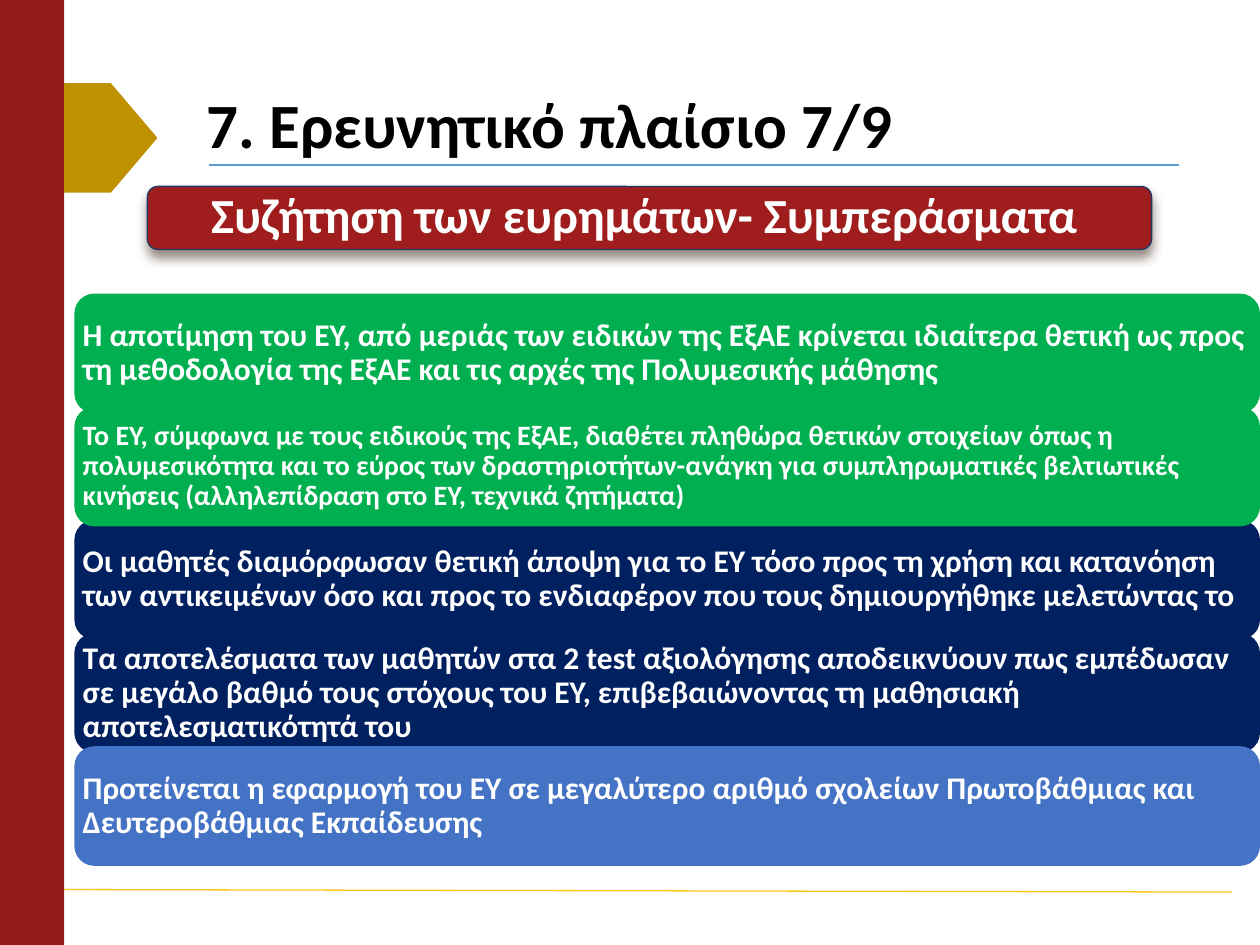
"""Build the slide of discussion and conclusions with a banner and five stacked cards."""
from dataclasses import dataclass

import lxml.etree
import pptx
import pptx.dml.color
import pptx.enum.shapes
import pptx.enum.text
import pptx.oxml
import pptx.oxml.ns
import pptx.util

COLUMNS, ROWS = 100, 75
PRESETS = pptx.enum.shapes.MSO_SHAPE
ALIGN = pptx.enum.text.PP_ALIGN


@dataclass(frozen=True)
class Theme:
    font: str = "Calibri"
    title_size: float = 36
    banner_size: float = 28
    card_size: float = 18
    small_size: float = 16
    rule_width: float = 0.75
    black: str = "000000"
    white: str = "FFFFFF"
    side: str = "931B1B"
    marker: str = "BF9000"
    banner: str = "9F1D1D"
    banner_edge: str = "203864"
    shadow: str = "4E3B30"
    blue_rule: str = "5B9BD5"
    gold_rule: str = "FFC61A"
    green: str = "00B050"
    navy: str = "002060"
    blue: str = "4472C4"


@dataclass(frozen=True)
class Area:
    column: float
    row: float
    columns: float
    rows: float


@dataclass(frozen=True)
class Card:
    position: int
    fill: str
    size: float
    text: str


THEME = Theme()
BANNER_AREA = Area(11.7, 14.8, 79.7, 5)
FIRST_CARD = Area(5.9, 23.3, 94.1, 9.5)
CARD_PITCH = 8.98
CARDS = (
    Card(2, THEME.navy, THEME.card_size,
         "Οι μαθητές διαμόρφωσαν θετική άποψη για το ΕΥ τόσο προς τη χρήση και κατανόηση "
         "των αντικειμένων όσο και προς το ενδιαφέρον που τους δημιουργήθηκε μελετώντας το"),
    Card(3, THEME.navy, THEME.card_size,
         "Τα αποτελέσματα των μαθητών στα 2 test αξιολόγησης αποδεικνύουν πως εμπέδωσαν "
         "σε μεγάλο βαθμό τους στόχους του ΕΥ, επιβεβαιώνοντας τη μαθησιακή αποτελεσματικότητά του"),
    Card(0, THEME.green, THEME.card_size,
         "Η αποτίμηση του ΕΥ, από μεριάς των ειδικών της ΕξΑΕ κρίνεται ιδιαίτερα θετική "
         "ως προς τη μεθοδολογία της ΕξΑΕ και τις αρχές της Πολυμεσικής μάθησης"),
    Card(4, THEME.blue, THEME.card_size,
         "Προτείνεται η εφαρμογή του ΕΥ σε μεγαλύτερο αριθμό σχολείων Πρωτοβάθμιας "
         "και Δευτεροβάθμιας Εκπαίδευσης"),
    Card(1, THEME.green, THEME.small_size,
         "Το ΕΥ, σύμφωνα με τους ειδικούς της ΕξΑΕ, διαθέτει πληθώρα θετικών στοιχείων όπως η "
         "πολυμεσικότητα και το εύρος των δραστηριοτήτων-ανάγκη για συμπληρωματικές βελτιωτικές "
         "κινήσεις (αλληλεπίδραση στο ΕΥ, τεχνικά ζητήματα)"),
)

deck = pptx.Presentation()
deck.slide_width, deck.slide_height = pptx.util.Inches(10), pptx.util.Inches(7.5)
page = deck.slides.add_slide(deck.slide_layouts[6])


def across(columns: float) -> int:
    return round(deck.slide_width * columns / COLUMNS)


def down(rows: float) -> int:
    return round(deck.slide_height * rows / ROWS)


def place(area: Area) -> tuple[int, int, int, int]:
    return across(area.column), down(area.row), across(area.columns), down(area.rows)


def colour(code: str) -> pptx.dml.color.RGBColor:
    return pptx.dml.color.RGBColor.from_string(code)


def add_block(preset: PRESETS, area: Area, fill: str, edge: str | None = None):
    block = page.shapes.add_shape(preset, *place(area))
    block.shadow.inherit = False
    block.fill.solid()
    block.fill.fore_color.rgb = colour(fill)
    if edge:
        block.line.color.rgb = colour(edge)
        block.line.width = pptx.util.Pt(THEME.rule_width)
    else:
        block.line.fill.background()
    return block


def add_rule(start: tuple[float, float], end: tuple[float, float], stroke: str) -> None:
    rule = page.shapes.add_connector(
        pptx.enum.shapes.MSO_CONNECTOR.STRAIGHT,
        across(start[0]), down(start[1]), across(end[0]), down(end[1]))
    rule.line.color.rgb = colour(stroke)
    rule.line.width = pptx.util.Pt(THEME.rule_width)
    lxml.etree.SubElement(rule.element.spPr, pptx.oxml.ns.qn("a:effectLst"))


def write(box, text: str, *, size: float, ink: str = THEME.white,
          align: ALIGN = ALIGN.LEFT, inset: float = 0.1) -> None:
    frame = box.text_frame
    frame.word_wrap = True
    frame.vertical_anchor = pptx.enum.text.MSO_ANCHOR.MIDDLE
    frame.margin_left = frame.margin_right = pptx.util.Inches(inset)
    frame.margin_top = frame.margin_bottom = pptx.util.Inches(inset)
    para = frame.paragraphs[0]
    para.alignment = align
    para.line_spacing = 0.9
    span = para.add_run()
    span.text = text
    span.font.name = THEME.font
    span.font.size = pptx.util.Pt(size)
    span.font.bold = True
    span.font.color.rgb = colour(ink)


def cast_shadow(block) -> None:
    effects = block.element.spPr.find(pptx.oxml.ns.qn("a:effectLst"))
    effects.append(pptx.oxml.parse_xml(
        f'<a:outerShdw {pptx.oxml.ns.nsdecls("a")} blurRad="{pptx.util.Pt(6)}" '
        f'dist="{pptx.util.Pt(4)}" dir="5400000" rotWithShape="0">'
        f'<a:srgbClr val="{THEME.shadow}"><a:alpha val="60000"/></a:srgbClr></a:outerShdw>'))


def add_card(card: Card) -> None:
    row = FIRST_CARD.row + card.position * CARD_PITCH
    area = Area(FIRST_CARD.column, row, FIRST_CARD.columns, FIRST_CARD.rows)
    block = add_block(PRESETS.ROUNDED_RECTANGLE, area, card.fill)
    write(block, card.text, size=card.size, inset=0.02)


def main() -> None:
    add_block(PRESETS.RECTANGLE, Area(0, 0, 5.1, ROWS), THEME.side)
    add_rule((16.6, 13.1), (93.6, 13.1), THEME.blue_rule)
    add_rule((5.1, 70.6), (97.8, 70.8), THEME.gold_rule)
    add_block(PRESETS.PENTAGON, Area(5.1, 6.6, 7.4, 8.7), THEME.marker)
    title = page.shapes.add_textbox(*place(Area(15.4, 6, 78.7, 8.4)))
    write(title, "7. Ερευνητικό πλαίσιο 7/9", size=THEME.title_size, ink=THEME.black)
    banner = add_block(PRESETS.ROUNDED_RECTANGLE, BANNER_AREA, THEME.banner, THEME.banner_edge)
    cast_shadow(banner)
    write(banner, "Συζήτηση των ευρημάτων- Συμπεράσματα ", size=THEME.banner_size, align=ALIGN.CENTER)
    for card in CARDS:
        add_card(card)
    deck.save("out.pptx")


if __name__ == "__main__":
    main()
